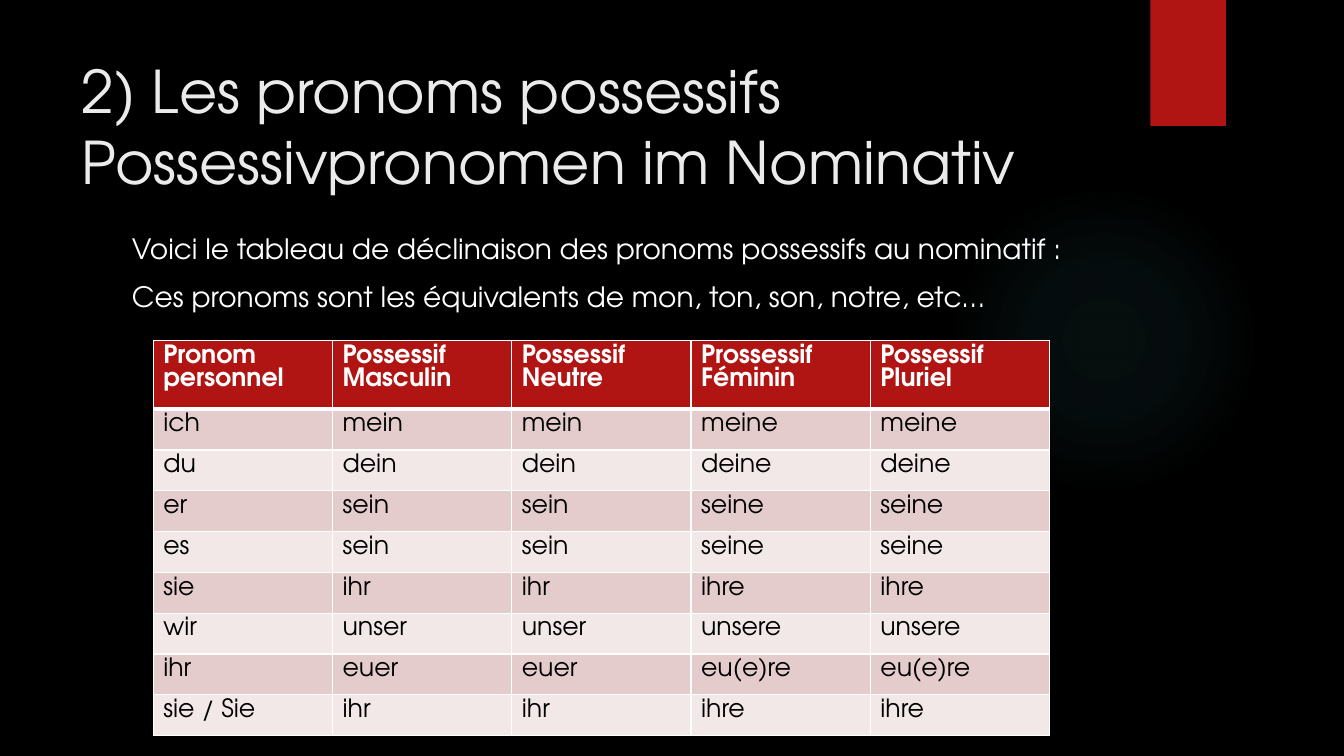
from lxml import etree
from pptx import Presentation
from pptx.dml.color import RGBColor
from pptx.enum.shapes import MSO_SHAPE
from pptx.enum.text import MSO_ANCHOR
from pptx.oxml import parse_xml
from pptx.oxml.ns import nsdecls, qn
from pptx.util import Inches, Pt

OVAL = MSO_SHAPE.OVAL
RECTANGLE = MSO_SHAPE.RECTANGLE
TOP = MSO_ANCHOR.TOP
MIDDLE = MSO_ANCHOR.MIDDLE

FONT = "TeX Gyre Adventor"
RED = "B01513"
WHITE = "FFFFFF"
BLACK = "000000"
BANDS = ("E4CCCC", "F2E8E7")
GLOW_STOPS = ((0, 7), (36, 6), (69, 0), (100, 0))

HEADERS = ["Pronom\npersonnel", "Possessif Masculin", "Possessif Neutre",
           "Prossessif\nFéminin", "Possessif\nPluriel"]
DECLENSIONS = [
    ("ich", "mein", "meine"),
    ("du", "dein", "deine"),
    ("er", "sein", "seine"),
    ("es", "sein", "seine"),
    ("sie", "ihr", "ihre"),
    ("wir", "unser", "unsere"),
    ("ihr", "euer", "eu(e)re"),
    ("sie / Sie", "ihr", "ihre"),
]


def color(value):
    return RGBColor.from_string(value)


class SlideBuilder:
    def __init__(self, presentation):
        self.slide = presentation.slides.add_slide(presentation.slide_layouts[6])

    def background(self, fill):
        background_fill = self.slide.background.fill
        background_fill.solid()
        background_fill.fore_color.rgb = color(fill)

    def shape(self, kind, box, fill):
        shape = self.slide.shapes.add_shape(kind, *map(Inches, box))
        shape.shadow.inherit = False
        shape.line.fill.background()
        shape.fill.solid()
        shape.fill.fore_color.rgb = color(fill)
        return shape

    def glow(self, box, fill):
        shape = self.shape(OVAL, box, fill)
        stops = "".join(
            f'<a:gs pos="{position * 1000}"><a:srgbClr val="{fill}">'
            f'<a:alpha val="{alpha * 1000}"/></a:srgbClr></a:gs>'
            for position, alpha in GLOW_STOPS)
        gradient = parse_xml(
            f'<a:gradFill {nsdecls("a")}><a:gsLst>{stops}</a:gsLst>'
            '<a:path path="circle"><a:fillToRect l="50000" t="50000" '
            'r="50000" b="50000"/></a:path></a:gradFill>')
        properties = shape.fill._xPr
        properties.replace(properties.find(qn("a:solidFill")), gradient)

    def style(self, paragraph, size, fill, bold=False):
        for run in paragraph.runs:
            run.font.name = FONT
            run.font.size = Pt(size)
            run.font.bold = bold
            run.font.color.rgb = color(fill)

    def text(self, box, text, size, fill, anchor=TOP, space_before=0):
        frame = self.slide.shapes.add_textbox(*map(Inches, box)).text_frame
        frame.word_wrap = True
        frame.vertical_anchor = anchor
        frame.text = text
        for index, paragraph in enumerate(frame.paragraphs):
            paragraph.space_before = Pt(space_before if index else 0)
            self.style(paragraph, size, fill)

    def borders(self, cell, top, bottom):
        properties = cell._tc.get_or_add_tcPr()
        widths = (("lnL", 1), ("lnR", 1), ("lnT", top), ("lnB", bottom))
        for index, (tag, width) in enumerate(widths):
            line = etree.Element(qn(f"a:{tag}"), w=str(Pt(width)))
            solid = etree.SubElement(line, qn("a:solidFill"))
            etree.SubElement(solid, qn("a:srgbClr"), val=WHITE)
            properties.insert(index, line)

    def cell(self, cell, text, row):
        header = row == 0
        cell.fill.solid()
        cell.fill.fore_color.rgb = color(RED if header else BANDS[(row - 1) % 2])
        cell.margin_top = cell.margin_bottom = Inches(0.04)
        cell.text_frame.text = text
        for paragraph in cell.text_frame.paragraphs:
            self.style(paragraph, 18, WHITE if header else BLACK, header)
        self.borders(cell, 3 if row == 1 else 1, 3 if header else 1)

    def table(self, box, rows, header_height):
        left, top, width, height = box
        table = self.slide.shapes.add_table(
            len(rows), len(rows[0]), *map(Inches, box)).table
        for column in table.columns:
            column.width = Inches(width / len(rows[0]))
        row_height = (height - header_height) / (len(rows) - 1)
        for index, values in enumerate(rows):
            table.rows[index].height = Inches(row_height if index else header_height)
            for column, value in enumerate(values):
                self.cell(table.cell(index, column), value, index)


def main():
    presentation = Presentation()
    presentation.slide_width = Inches(13.33)
    presentation.slide_height = Inches(7.5)
    builder = SlideBuilder(presentation)
    builder.background(BLACK)
    builder.glow((9.41, 1.83, 3.08, 3.08), "50B9C1")
    builder.shape(RECTANGLE, (11.41, 0, 0.75, 1.25), RED)
    builder.text((0.71, 0.48, 10.29, 1.53),
                 "2) Les pronoms possessifs\vPossessivpronomen im Nominativ",
                 42, "EBEBEB", MIDDLE)
    builder.text((1.21, 2.25, 9.78, 4.59),
                 "Voici le tableau de déclinaison des pronoms possessifs au nominatif :\n"
                 "Ces pronoms sont les équivalents de mon, ton, son, notre, etc…",
                 20, WHITE, space_before=10)
    rows = [HEADERS] + [
        [pronoun, masculine, masculine, feminine, feminine]
        for pronoun, masculine, feminine in DECLENSIONS]
    builder.table((1.52, 3.38, 8.89, 3.81), rows, 0.57)
    presentation.save("out.pptx")


if __name__ == "__main__":
    main()
